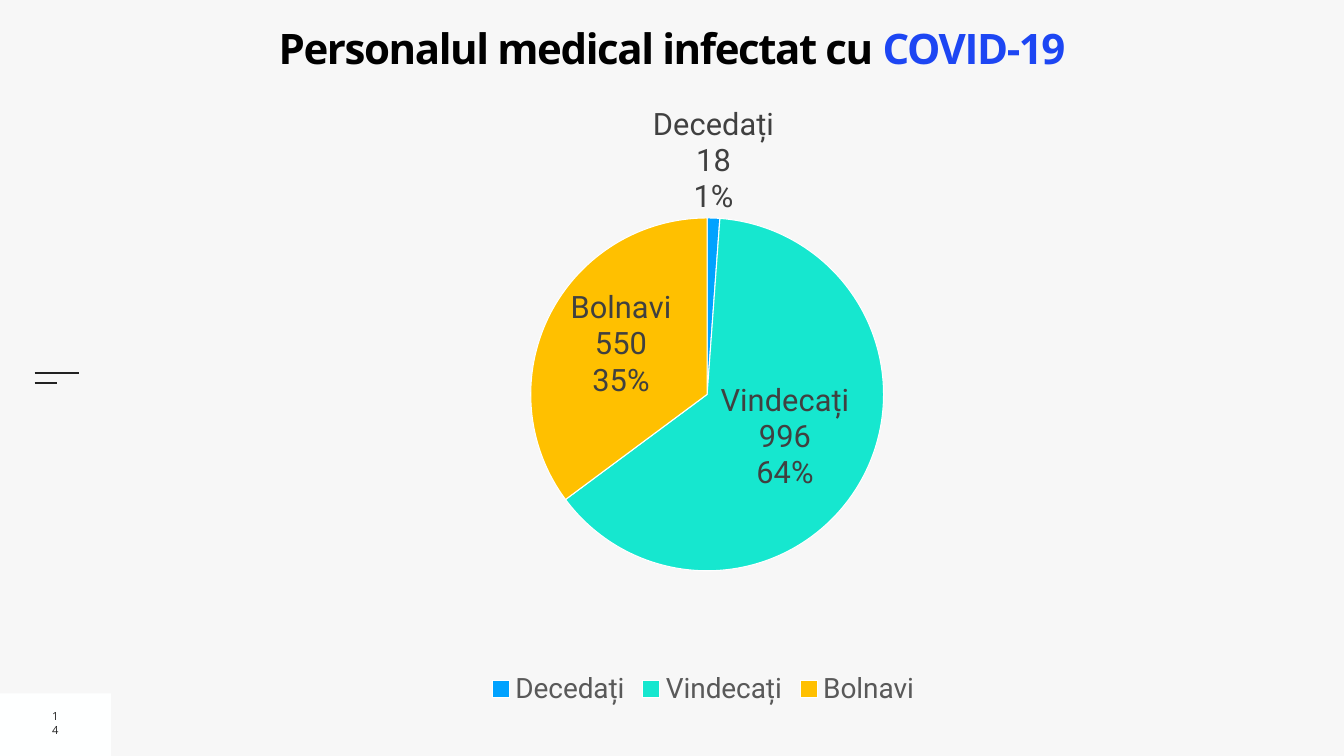
from lxml import etree
from pptx import Presentation
from pptx import util as u
from pptx.chart.data import CategoryChartData
from pptx.dml.color import RGBColor
from pptx.enum import chart as ch, shapes, text
from pptx.oxml import parse_xml
from pptx.oxml.ns import nsdecls, qn

BACKGROUND = RGBColor(0xF7, 0xF7, 0xF7)
WHITE = RGBColor(0xFE, 0xFF, 0xFF)
BLACK = RGBColor(0, 0, 0)
INK = RGBColor(0x22, 0x22, 0x22)
ACCENT = RGBColor(0x1D, 0x46, 0xF3)
LABEL_GREY = RGBColor(0x40, 0x40, 0x40)
LEGEND_GREY = RGBColor(0x59, 0x59, 0x59)
OUTCOMES = [
    ("Decedați", 18, RGBColor(0x00, 0xA2, 0xFF)),
    ("Vindecați", 996, RGBColor(0x16, 0xE7, 0xCF)),
    ("Bolnavi", 550, RGBColor(0xFF, 0xC0, 0x00)),
]


def style(font, name, size, color):
    font.name = name
    font.size = u.Pt(size)
    font.color.rgb = color


def add_text(box, runs, size, inset):
    frame = box.text_frame
    frame.word_wrap = True
    frame.margin_left = frame.margin_right = u.Cm(inset)
    frame.margin_top = frame.margin_bottom = u.Cm(inset)
    line = frame.paragraphs[0]
    line.alignment = text.PP_ALIGN.CENTER
    for words, color in runs:
        run = line.add_run()
        run.text = words
        style(run.font, "Open Sans", size, color)
    return frame


prs = Presentation()
prs.slide_width = u.Cm(67.74)
prs.slide_height = u.Cm(38.1)
slide = prs.slides.add_slide(prs.slide_layouts[6])
slide.background.fill.solid()
slide.background.fill.fore_color.rgb = BACKGROUND

corner = slide.shapes.add_shape(shapes.MSO_SHAPE.RECTANGLE, u.Cm(0), u.Cm(34.95), u.Cm(5.59), u.Cm(3.15))
corner.shadow.inherit = False
corner.fill.solid()
corner.fill.fore_color.rgb = WHITE
corner.line.fill.background()

for y, right in ((18.82, 3.99), (19.28, 2.87)):
    dash = slide.shapes.add_connector(shapes.MSO_CONNECTOR.STRAIGHT, u.Cm(1.75), u.Cm(y), u.Cm(right), u.Cm(y))
    dash.line.color.rgb = INK
    dash.line.width = u.Pt(3)
    etree.SubElement(dash._element.spPr, qn("a:effectLst"))

title = slide.shapes.add_textbox(u.Cm(0), u.Cm(1.14), u.Cm(67.74), u.Cm(4.01))
headline = add_text(title, [("Personalul medical infectat cu ", BLACK), ("COVID-19", ACCENT)], 60, 0)
for run in headline.paragraphs[0].runs:
    run.font.bold = True
    run.font._element.set("spc", "-200")

page_number = slide.shapes.add_textbox(u.Cm(2.36), u.Cm(35.79), u.Cm(0.86), u.Cm(1.3))
page = add_text(page_number, [("14", INK)], 16, 0.25)
page.vertical_anchor = text.MSO_ANCHOR.MIDDLE

outcome_data = CategoryChartData()
outcome_data.categories = [name for name, _, _ in OUTCOMES]
outcome_data.add_series("Series 1", [count for _, count, _ in OUTCOMES])
pie = slide.shapes.add_chart(
    ch.XL_CHART_TYPE.PIE, u.Cm(15.67), u.Cm(5.16), u.Cm(39.55), u.Cm(30.66), outcome_data
).chart
pie.has_title = False
style(pie.font, "Roboto", 40, BLACK)
pie.has_legend = True
pie.legend.position = ch.XL_LEGEND_POSITION.BOTTOM
pie.legend.include_in_layout = False
style(pie.legend.font, "Roboto", 40, LEGEND_GREY)

plot = pie.plots[0]
plot.vary_by_categories = True
infected = plot.series[0]
for i, (_, _, color) in enumerate(OUTCOMES):
    part = infected.points[i].format
    part.fill.solid()
    part.fill.fore_color.rgb = color
    part.line.color.rgb = WHITE
    part.line.width = u.Pt(1.5)

labels = infected.data_labels
labels.show_category_name = True
labels.show_value = True
labels.show_percentage = True
labels.position = ch.XL_LABEL_POSITION.BEST_FIT
style(labels.font, "Roboto", 44, LABEL_GREY)
separator = parse_xml(f"<c:separator {nsdecls('c')}>\n</c:separator>")
labels._element.find(qn("c:showBubbleSize")).addnext(separator)

plot_area = pie._chartSpace.chart.plotArea
for old in plot_area.findall(qn("c:layout")):
    plot_area.remove(old)
layout = etree.Element(qn("c:layout"))
manual = etree.SubElement(layout, qn("c:manualLayout"))
for tag, value in (
    ("layoutTarget", "inner"), ("xMode", "edge"), ("yMode", "edge"),
    ("x", "0.28"), ("y", "0.19"), ("w", "0.45"), ("h", "0.58"),
):
    etree.SubElement(manual, qn(f"c:{tag}")).set("val", value)
plot_area.insert(0, layout)

prs.save("out.pptx")
